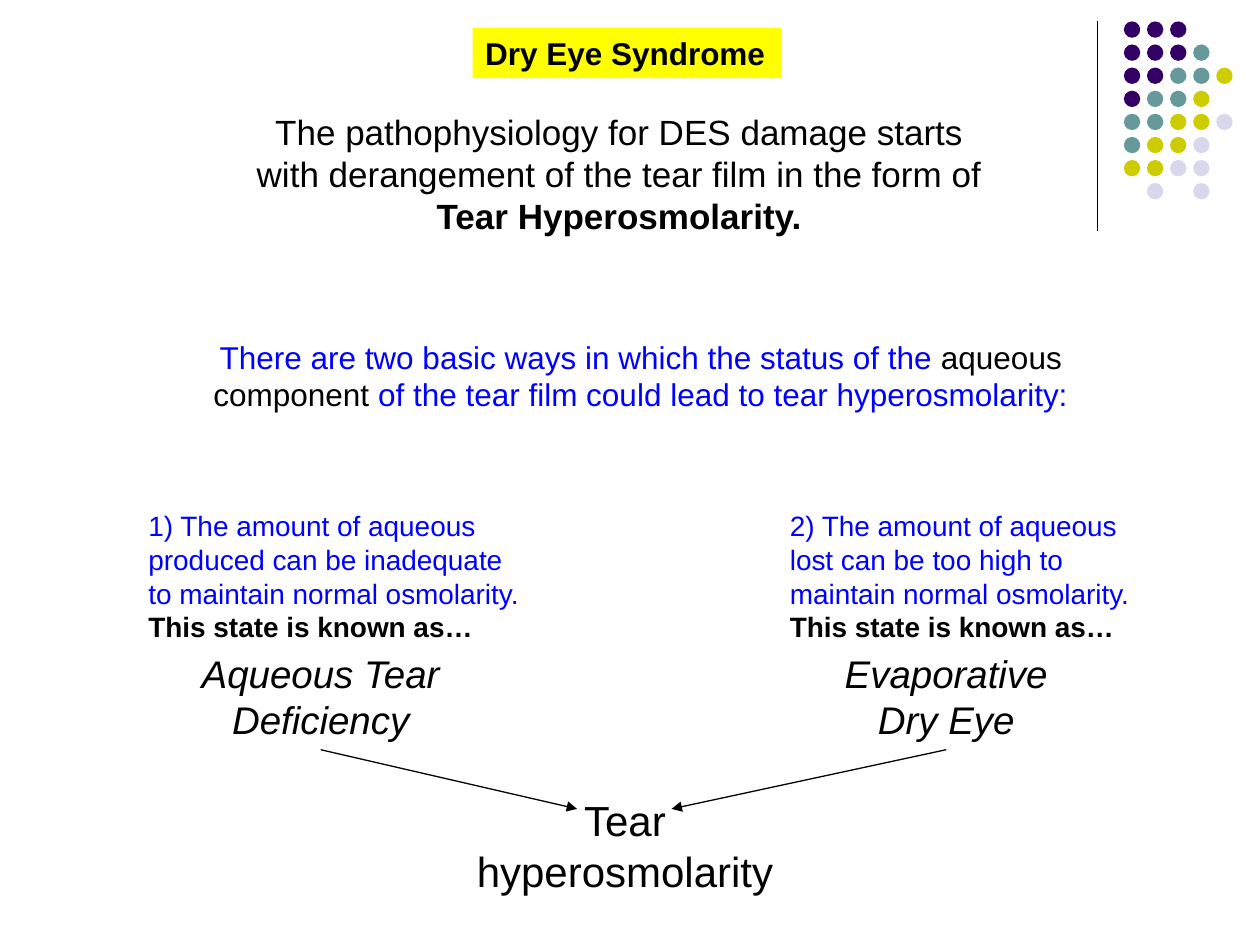
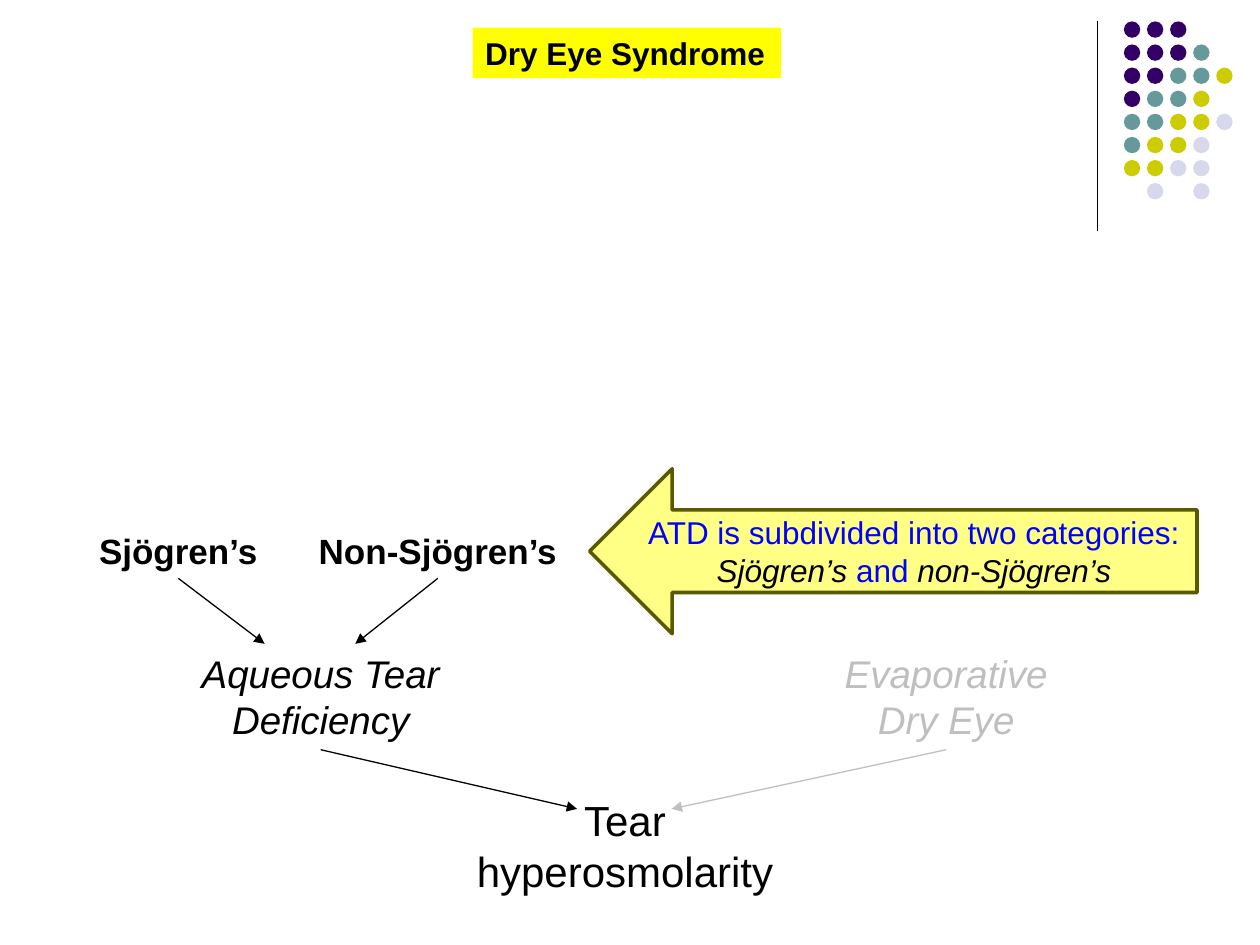
"""Build two slides on how dry eye syndrome leads to tear hyperosmolarity."""
import pptx
import pptx.dml.color
import pptx.enum.shapes
import pptx.enum.text
import pptx.oxml
import pptx.oxml.ns
import pptx.util

Inches = pptx.util.Inches
SHAPES = pptx.enum.shapes.MSO_SHAPE
ALIGN = pptx.enum.text.PP_ALIGN
ANCHOR = pptx.enum.text.MSO_ANCHOR
AUTO_SIZE = pptx.enum.text.MSO_AUTO_SIZE

FONT = "Arial"
BLACK, BLUE, GREY = "000000", "0000FF", "BFBFBF"
YELLOW, PALE_YELLOW, OLIVE = "FFFF00", "FFFF85", "595900"

TITLE = "Dry Eye Syndrome"
TITLE_BOX = (3.75, 0.22, 2.45, 0.4)

DOT_COLOURS = {"P": "330066", "T": "669999", "Y": "CCCC00", "L": "D8D8EC"}
DOT_ROWS = ["PPP", "PPPT", "PPTTY", "PTTY", "TTYYL", "TYYL", "YYLL", " L L"]
DOT_LEFT, DOT_TOP, DOT_SIZE = 8.92, 0.17, 0.13
DOT_PITCH = 0.55 / 3
RULE = ((8.71, 0.17), (8.71, 1.83))

OUTCOME = ["Tear", "hyperosmolarity"]
OUTCOME_BOX = (3.67, 6.26, 2.58, 0.91)
DEFICIENCY = {"text": "Aqueous Tear Deficiency", "box": (1.42, 5.11, 2.25, 0.84), "tip": (4.58, 6.42)}
EVAPORATIVE = {"text": "Evaporative Dry Eye", "box": (6.43, 5.11, 2.16, 0.84), "tip": (5.33, 6.42)}

KNOWN_AS = ("This state is known as…", {"colour": BLACK, "bold": True})
STATEMENTS = [
    {"box": (1.83, 0.83, 6.17, 1.11), "size": 20, "runs": [
        "The pathophysiology for DES damage starts with derangement of the tear film in the form of ",
        ("Tear Hyperosmolarity.", {"bold": True})]},
    {"box": (1.08, 3.99, 3.17, 1.18), "size": 16, "colour": BLUE, "align": ALIGN.LEFT, "runs": [
        "1) The amount of aqueous produced can be inadequate to maintain normal osmolarity. ", KNOWN_AS]},
    {"box": (6.17, 3.99, 3.08, 1.18), "size": 16, "colour": BLUE, "align": ALIGN.LEFT, "runs": [
        "2) The amount of aqueous lost can be too high to maintain normal osmolarity. ", KNOWN_AS]},
    {"box": (1.5, 2.63, 7.17, 0.71), "size": 18, "colour": BLUE, "runs": [
        "There are two basic ways in which the status of the ",
        ("aqueous component ", {"colour": BLACK}),
        "of the tear film could lead to tear hyperosmolarity:"]},
]

CATEGORIES = [
    {"text": "Non-Sjögren’s", "box": (2.42, 4.15, 2.11, 0.44), "tip": (2.82, 5.11)},
    {"text": "Sjögren’s", "box": (0.68, 4.15, 1.47, 0.44), "tip": (2.1, 5.11)},
]
EMPHASIS = {"colour": BLACK, "italic": True}
CALLOUT_BOX = (4.68, 3.72, 4.82, 1.31)
CALLOUT = ["ATD is subdivided into two categories: ", ("Sjögren’s ", EMPHASIS), "and",
           (" non-Sjögren’s", EMPHASIS)]


def rgb(colour):
    """Turn a hex string into a colour."""
    return pptx.dml.color.RGBColor.from_string(colour)


def inches(values):
    """Turn numbers into lengths."""
    return [Inches(value) for value in values]


def fill(shape, colour):
    """Give a shape a plain fill."""
    shape.fill.solid()
    shape.fill.fore_color.rgb = rgb(colour)


def write(shape, paragraphs, size=18, colour=BLACK, bold=False, italic=False,
          align=ALIGN.CENTER, anchor=ANCHOR.TOP, wrap=True, grow=True):
    """Fill a shape with paragraphs, each a string or a list of runs."""
    frame = shape.text_frame
    frame.word_wrap = wrap
    frame.auto_size = AUTO_SIZE.SHAPE_TO_FIT_TEXT if grow else AUTO_SIZE.NONE
    frame.vertical_anchor = anchor
    base = {"colour": colour, "bold": bold, "italic": italic}
    for index, runs in enumerate(paragraphs):
        paragraph = frame.add_paragraph() if index else frame.paragraphs[0]
        paragraph.alignment = align
        for part in [runs] if isinstance(runs, str) else runs:
            text, changes = (part, {}) if isinstance(part, str) else part
            look = {**base, **changes}
            run = paragraph.add_run()
            run.text = text
            run.font.name, run.font.size = FONT, pptx.util.Pt(size)
            run.font.bold, run.font.italic = look["bold"], look["italic"]
            run.font.color.rgb = rgb(look["colour"])


def add_text(slide, box, paragraphs, **look):
    """Add a text box and write in it."""
    label = slide.shapes.add_textbox(*inches(box))
    write(label, paragraphs, **look)
    return label


def add_line(slide, start, end, colour=BLACK, arrow=False):
    """Draw a thin straight line, with an arrowhead at its end if asked."""
    line = slide.shapes.add_connector(pptx.enum.shapes.MSO_CONNECTOR.STRAIGHT, *inches(start + end))
    line.line.color.rgb = rgb(colour)
    line.line.width = pptx.util.Pt(0.75)
    properties = line.element.spPr
    namespace = pptx.oxml.ns.nsdecls("a")
    if arrow:
        head = pptx.oxml.parse_xml(f'<a:tailEnd {namespace} type="triangle"/>')
        properties.find(pptx.oxml.ns.qn("a:ln")).append(head)
    properties.append(pptx.oxml.parse_xml(f"<a:effectLst {namespace}/>"))
    return line


def add_cause(slide, cause, colour=BLACK, **look):
    """Add a label and the arrow that leads from its bottom to its effect."""
    left, top, width, height = cause["box"]
    label = add_text(slide, cause["box"], [cause["text"]], colour=colour, **look)
    arrow = add_line(slide, (left + width / 2, top + height), cause["tip"], colour, arrow=True)
    arrow.begin_connect(label, 2)


def add_dots(slide):
    """Draw the corner pattern of coloured dots."""
    dots = slide.shapes.add_group_shape()
    for row, letters in enumerate(DOT_ROWS):
        for column, letter in enumerate(letters):
            if letter in DOT_COLOURS:
                dot = dots.shapes.add_shape(SHAPES.OVAL, *inches((
                    DOT_LEFT + column * DOT_PITCH, DOT_TOP + row * DOT_PITCH, DOT_SIZE, DOT_SIZE)))
                dot.shadow.inherit = False
                fill(dot, DOT_COLOURS[letter])
                dot.line.fill.background()


def add_base_slide(deck, evaporative_colour):
    """Add a slide with the title, corner pattern and the two causes."""
    slide = deck.slides.add_slide(deck.slide_layouts[5])
    add_line(slide, *RULE)
    add_dots(slide)
    title = slide.shapes.title
    title.left, title.top, title.width, title.height = inches(TITLE_BOX)
    fill(title, YELLOW)
    write(title, [TITLE], bold=True, align=ALIGN.LEFT, wrap=False, grow=False)
    add_text(slide, OUTCOME_BOX, OUTCOME, size=24, wrap=False)
    add_cause(slide, DEFICIENCY, size=22, italic=True)
    add_cause(slide, EVAPORATIVE, evaporative_colour, size=22, italic=True)
    return slide


def add_mechanism_slide(deck):
    """Explain the two ways to tear hyperosmolarity."""
    slide = add_base_slide(deck, BLACK)
    for statement in STATEMENTS:
        look = {key: value for key, value in statement.items() if key not in ("box", "runs")}
        add_text(slide, statement["box"], [statement["runs"]], **look)


def add_categories_slide(deck):
    """Split aqueous tear deficiency into its two categories."""
    slide = add_base_slide(deck, GREY)
    for category in CATEGORIES:
        add_cause(slide, category, size=20, bold=True, wrap=False)
    callout = slide.shapes.add_shape(SHAPES.LEFT_ARROW, *inches(CALLOUT_BOX))
    callout.shadow.inherit = False
    fill(callout, PALE_YELLOW)
    callout.line.color.rgb = rgb(OLIVE)
    callout.line.width = pptx.util.Pt(2)
    write(callout, [CALLOUT], colour=BLUE, anchor=ANCHOR.MIDDLE, grow=False)


def main():
    """Build and save the deck."""
    deck = pptx.Presentation()
    deck.slide_width, deck.slide_height = Inches(10), Inches(7.5)
    add_mechanism_slide(deck)
    add_categories_slide(deck)
    deck.save("out.pptx")


if __name__ == "__main__":
    main()
